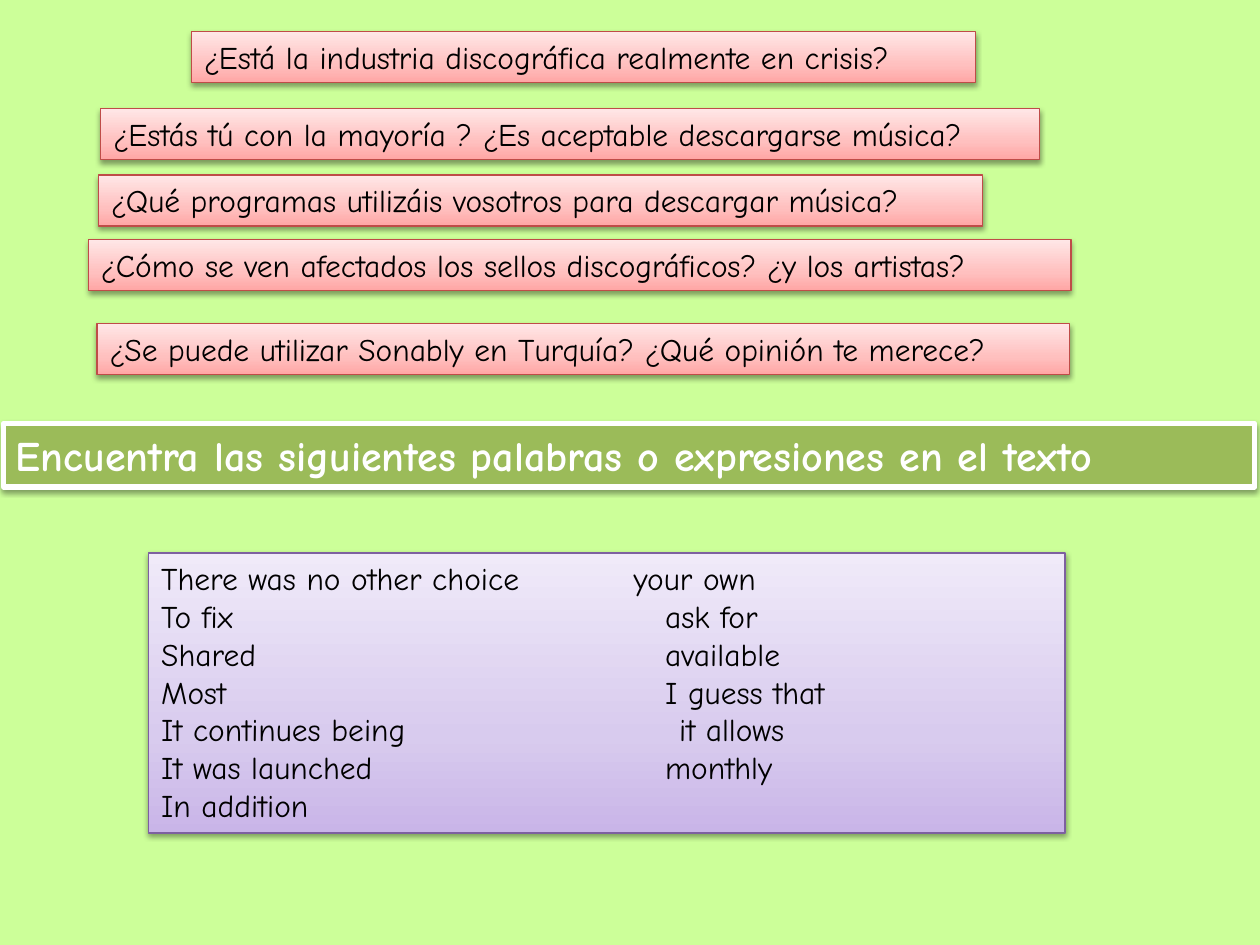
from copy import deepcopy

from lxml import etree
from pptx import Presentation
from pptx.dml.color import RGBColor
from pptx.enum.shapes import MSO_SHAPE
from pptx.enum.text import MSO_ANCHOR, MSO_AUTO_SIZE, PP_ALIGN
from pptx.oxml.ns import qn
from pptx.util import Pt

RECT = MSO_SHAPE.RECTANGLE
TOP = MSO_ANCHOR.TOP
LEFT = PP_ALIGN.LEFT
GROW = MSO_AUTO_SIZE.SHAPE_TO_FIT_TEXT

FONT = "Comic Neue"
PINK = [(0, "FFA6A5"), (0.35, "FFC0BF"), (1, "FFE7E7")]
LILAC = [(0, "C9B5E8"), (0.35, "D8CBEE"), (1, "F0EAF9")]

QUESTIONS = [
    (109.4, 18, 448, "¿Está la industria discográfica realmente en crisis?"),
    (57.6, 61.9, 536.4, "¿Estás tú con la mayoría ? ¿Es aceptable descargarse música?"),
    (50.4, 136.8, 561.6, "¿Cómo se ven afectados los sellos discográficos? ¿y los artistas?"),
    (56.2, 100, 505.4, "¿Qué programas utilizáis vosotros para descargar música?"),
    (55.4, 185, 556, "¿Se puede utilizar Sonably en Turquía? ¿Qué opinión te merece?"),
]
EXPRESSIONS = [
    ("There was no other choice", "your own", 270),
    ("To fix", "ask for", 288),
    ("Shared", "available", 288),
    ("Most", "I guess that", 288),
    ("It continues being", "it allows", 296),
    ("It was launched", "monthly", 288),
    ("In addition", "", 288),
]


def rgb(color):
    return RGBColor.from_string(color)


def set_gradient(fill, stops):
    fill.gradient()
    fill.gradient_angle = 90
    gs_lst = fill._xPr.find(qn("a:gradFill")).find(qn("a:gsLst"))
    gs_lst.append(deepcopy(gs_lst[0]))
    for stop, (position, color) in zip(fill.gradient_stops, stops):
        stop.position = position
        stop.color.rgb = rgb(color)


def add_shadow(sp):
    sp.shadow.inherit = False
    effects = sp._element.spPr.find(qn("a:effectLst"))
    shadow = etree.SubElement(
        effects, qn("a:outerShdw"), blurRad=str(Pt(3.1)), dist=str(Pt(1.6)),
        dir="5400000", rotWithShape="0")
    color = etree.SubElement(shadow, qn("a:srgbClr"), val="000000")
    etree.SubElement(color, qn("a:alpha"), val="38000")


def add_box(slide, left, top, width, height, line, line_width=0.75):
    sp = slide.shapes.add_shape(RECT, Pt(left), Pt(top), Pt(width), Pt(height))
    sp.line.color.rgb = rgb(line)
    sp.line.width = Pt(line_width)
    add_shadow(sp)
    tf = sp.text_frame
    tf.word_wrap = True
    tf.auto_size = GROW
    tf.vertical_anchor = TOP
    return sp


def write(p, text, size=18, color="000000", bold=False):
    p.alignment = LEFT
    r = p.add_run()
    r.text = text
    r.font.name = FONT
    r.font.size = Pt(size)
    r.font.bold = bold
    r.font.color.rgb = rgb(color)


def set_tab(p, position):
    tabs = etree.SubElement(p._p.get_or_add_pPr(), qn("a:tabLst"))
    etree.SubElement(tabs, qn("a:tab"), pos=str(Pt(position)), algn="l")


def add_question(slide, left, top, width, text):
    sp = add_box(slide, left, top, width, 29.1, "BF4C48")
    set_gradient(sp.fill, PINK)
    write(sp.text_frame.paragraphs[0], text)


def add_banner(slide, text):
    sp = add_box(slide, 2, 242, 715, 36.4, "FFFFFF", 3)
    sp.fill.solid()
    sp.fill.fore_color.rgb = rgb("9BBB59")
    write(sp.text_frame.paragraphs[0], text, 24, "FFFFFF", True)


def add_expressions(slide, rows):
    sp = add_box(slide, 85, 316, 523.6, 160, "7D60A0")
    set_gradient(sp.fill, LILAC)
    tf = sp.text_frame
    for i, (first, second, position) in enumerate(rows):
        p = tf.add_paragraph() if i else tf.paragraphs[0]
        if second:
            set_tab(p, position)
        write(p, f"{first}\t{second}" if second else first)


def main():
    prs = Presentation()
    prs.slide_width, prs.slide_height = Pt(720), Pt(540)
    slide = prs.slides.add_slide(prs.slide_layouts[6])
    slide.background.fill.solid()
    slide.background.fill.fore_color.rgb = rgb("CCFF99")
    for question in QUESTIONS:
        add_question(slide, *question)
    add_banner(slide, "Encuentra las siguientes palabras o expresiones en el texto")
    add_expressions(slide, EXPRESSIONS)
    prs.save("out.pptx")


if __name__ == "__main__":
    main()
